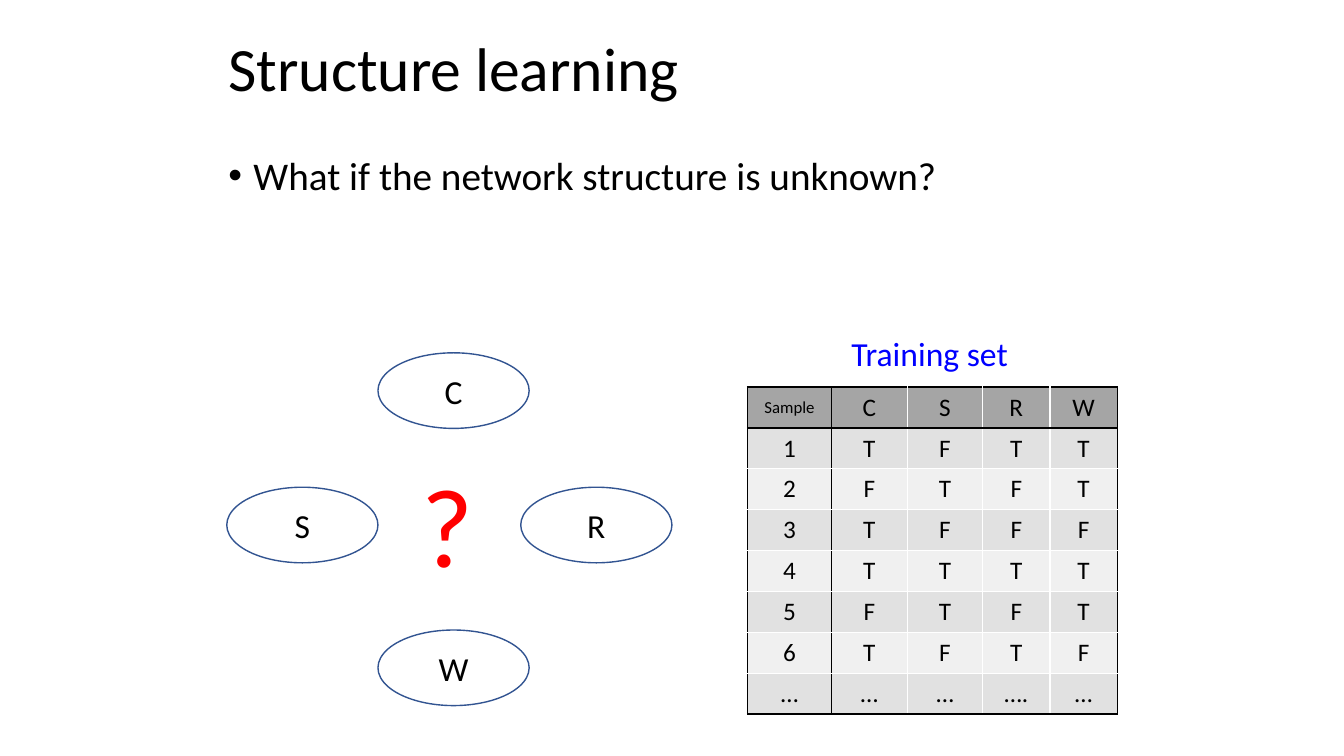
import lxml.etree
import pptx
import pptx.dml.color
import pptx.enum.shapes
import pptx.enum.text
import pptx.oxml.ns
import pptx.util

Pt = pptx.util.Pt
ALIGN = pptx.enum.text.PP_ALIGN
ANCHOR = pptx.enum.text.MSO_ANCHOR
COLOURS = {
    "ink": "000000",
    "paper": "FFFFFF",
    "outline": "325491",
    "heading": "0000FF",
    "question": "FF0000",
    "header": "A5A5A5",
    "odd": "E1E1E1",
    "even": "F0F0F0",
}
SAMPLES = [
    ["Sample", "C", "S", "R", "W"],
    ["1", "T", "F", "T", "T"],
    ["2", "F", "T", "F", "T"],
    ["3", "T", "F", "F", "F"],
    ["4", "T", "T", "T", "T"],
    ["5", "F", "T", "F", "T"],
    ["6", "T", "F", "T", "F"],
    ["…", "…", "…", "….", "…"],
]
COLUMN_WIDTHS = [60, 54, 54, 48, 48]
ROW_HEIGHT = 29.2


def colour(name):
    """Return the named colour."""
    return pptx.dml.color.RGBColor.from_string(COLOURS[name])


def add_element(parent, tag, position=None, **attributes):
    """Add a DrawingML child and return it."""
    child = lxml.etree.Element(pptx.oxml.ns.qn(tag), attributes)
    parent.insert(len(parent) if position is None else position, child)
    return child


def write(frame, text, size, ink="ink", anchor=ANCHOR.TOP, wrap=True, **layout):
    """Fill a text frame with one formatted paragraph."""
    frame.vertical_anchor = anchor
    frame.word_wrap = wrap
    para = frame.paragraphs[0]
    for name, value in layout.items():
        setattr(para, name, value)
    span = para.add_run()
    span.text = text
    for name, value in {"name": "Calibri", "size": Pt(size)}.items():
        setattr(span.font, name, value)
    span.font.color.rgb = colour(ink)
    return para


def add_label(page, box, text, size, ink, alignment):
    """Add an unwrapped text box that fits its text."""
    frame = page.shapes.add_textbox(*map(Pt, box)).text_frame
    write(frame, text, size, ink, wrap=False, alignment=alignment)
    frame.auto_size = pptx.enum.text.MSO_AUTO_SIZE.SHAPE_TO_FIT_TEXT


def place_title(page, box):
    """Move and fill the title placeholder."""
    title = page.shapes.title
    for name, value in zip(("left", "top", "width", "height"), box):
        setattr(title, name, Pt(value))
    write(title.text_frame, "Structure learning", 44, anchor=ANCHOR.MIDDLE,
          alignment=ALIGN.LEFT, line_spacing=0.9)


def add_body(page, box):
    """Add the bulleted question."""
    frame = page.shapes.add_textbox(*map(Pt, box)).text_frame
    para = write(frame, "What if the network structure is unknown?", 28,
                 line_spacing=0.9, space_before=Pt(10))
    properties = para._p.get_or_add_pPr()
    properties.set("marL", str(Pt(18)))
    properties.set("indent", str(Pt(-18)))
    add_element(properties, "a:buFont", typeface="Arial")
    add_element(properties, "a:buChar", char="•")


def add_network(page, box):
    """Place four unlinked nodes around a question mark."""
    left, top, width, height = box
    node_width, node_height = 108, 54
    nodes = {
        "C": (108, 0),
        "S": (0, 96),
        "R": (width - node_width, 96),
        "W": (108, height - node_height),
    }
    for name, (across, down) in nodes.items():
        node = page.shapes.add_shape(
            pptx.enum.shapes.MSO_SHAPE.OVAL, Pt(left + across), Pt(top + down),
            Pt(node_width), Pt(node_height))
        node.shadow.inherit = False
        node.fill.solid()
        node.fill.fore_color.rgb = colour("paper")
        node.line.color.rgb = colour("outline")
        node.line.width = Pt(1)
        write(node.text_frame, name, 24, anchor=ANCHOR.MIDDLE,
              alignment=ALIGN.CENTER)
    add_label(page, (left + 132, top + 70, 52, 104), "?", 80, "question",
              ALIGN.LEFT)


def set_borders(cell, dark_sides):
    """Rule each side of a cell in black or white."""
    properties = cell._tc.get_or_add_tcPr()
    for position, side in enumerate(("L", "R", "T", "B")):
        line = add_element(properties, f"a:ln{side}", position, w=str(Pt(1)))
        fill = add_element(line, "a:solidFill")
        shade = "ink" if dark_sides[side] else "paper"
        add_element(fill, "a:srgbClr", val=COLOURS[shade])


def add_training_set(page, box):
    """Add the heading and the table of samples."""
    left, top, width, height = box
    add_label(page, (left + 66, top, 128, 36), "Training set", 24, "heading",
              ALIGN.CENTER)
    last_row, last_column = len(SAMPLES) - 1, len(COLUMN_WIDTHS) - 1
    table = page.shapes.add_table(
        last_row + 1, last_column + 1, Pt(left), Pt(top + 42.5), Pt(width),
        Pt(height - 42.5)).table
    for column, column_width in zip(table.columns, COLUMN_WIDTHS):
        column.width = Pt(column_width)
    for r, values in enumerate(SAMPLES):
        table.rows[r].height = Pt(ROW_HEIGHT)
        shade = "header" if r == 0 else ("odd" if r % 2 else "even")
        for c, text in enumerate(values):
            cell = table.cell(r, c)
            corner = r == c == 0
            write(cell.text_frame, text, 12 if corner else 18,
                  alignment=ALIGN.CENTER)
            cell.vertical_anchor = ANCHOR.MIDDLE if corner else ANCHOR.TOP
            cell.fill.solid()
            cell.fill.fore_color.rgb = colour(shade)
            set_borders(cell, {"L": c <= 1, "R": c in (0, last_column),
                               "T": r <= 1, "B": r in (0, last_row)})


def main():
    """Build and save the slide."""
    deck = pptx.Presentation()
    deck.slide_width, deck.slide_height = Pt(960), Pt(540)
    page = deck.slides.add_slide(deck.slide_layouts[5])
    place_title(page, (156, 6, 648, 90))
    add_body(page, (156, 108, 648, 356))
    add_training_set(page, (534, 234, sum(COLUMN_WIDTHS), 276.1))
    add_network(page, (162, 252, 318, 252))
    deck.save("out.pptx")


if __name__ == "__main__":
    main()
